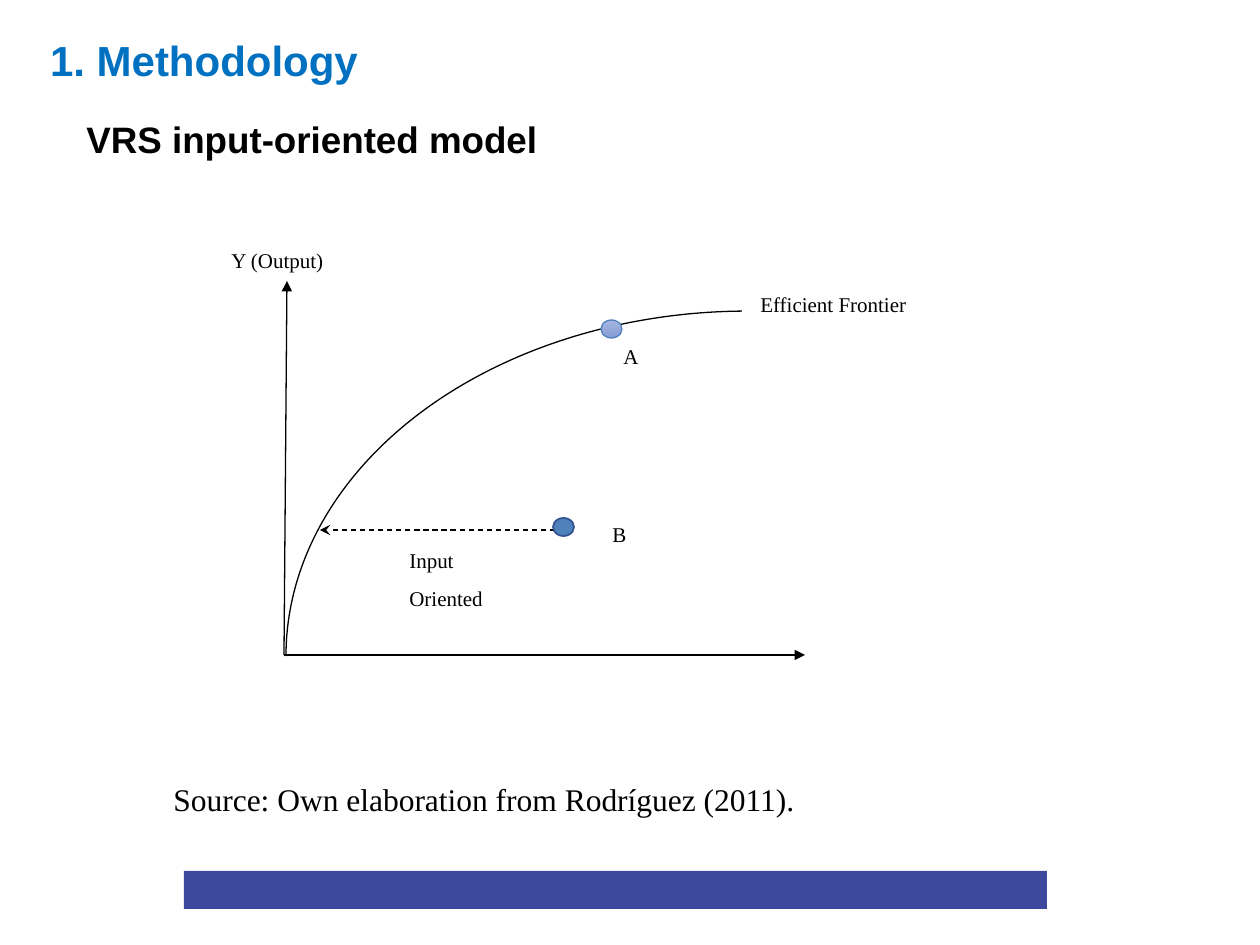
from dataclasses import dataclass

from pptx import Presentation
from pptx.dml.color import RGBColor
from pptx.enum.dml import MSO_LINE
from pptx.enum.shapes import MSO_CONNECTOR, MSO_SHAPE
from pptx.enum.text import MSO_ANCHOR, PP_ALIGN
from pptx.oxml.ns import qn
from pptx.util import Pt
from lxml import etree

PX = 914400 / 126
DASH = MSO_LINE.DASH
STRAIGHT = MSO_CONNECTOR.STRAIGHT
ARC, OVAL, RECTANGLE = MSO_SHAPE.ARC, MSO_SHAPE.OVAL, MSO_SHAPE.RECTANGLE
MIDDLE = MSO_ANCHOR.MIDDLE
CENTER, LEFT = PP_ALIGN.CENTER, PP_ALIGN.LEFT


@dataclass(frozen=True)
class Theme:
    """Colours, fonts and type sizes of the slide."""
    ink: str = "000000"
    title: str = "0070C0"
    bar: str = "3D499D"
    point: str = "4F81BD"
    point_edge: str = "31538F"
    gradient: tuple = ("A6B6DE", "859CD7")
    sans: str = "Arial"
    serif: str = "Times New Roman"
    title_size: int = 24
    subtitle_size: int = 21
    source_size: int = 18
    label_size: int = 12
    thin: float = 0.75


THEME = Theme()


def emu(*lengths):
    """Turn px lengths into EMU."""
    return [round(length * PX) for length in lengths]


def rgb(value):
    """Return the colour for a hex value."""
    return RGBColor.from_string(value)


def write(shape, text, size, font_name, color, bold=False, align=LEFT):
    """Put one formatted paragraph into a shape."""
    frame = shape.text_frame
    frame.word_wrap = True
    frame.text = text
    paragraph = frame.paragraphs[0]
    paragraph.alignment = align
    font = paragraph.runs[0].font
    font.size, font.name, font.bold = Pt(size), font_name, bold
    font.color.rgb = rgb(color)
    return paragraph


def add_text(slide, box, *style, **options):
    """Add a text box and return its paragraph."""
    return write(slide.shapes.add_textbox(*emu(*box)), *style, **options)


def add_label(slide, box, text):
    """Add a widely spaced diagram label."""
    paragraph = add_text(slide, box, text, THEME.label_size, THEME.serif, THEME.ink)
    paragraph.line_spacing = 1.5
    paragraph.space_after = Pt(12)


def add_outline(slide, kind, box, color, width):
    """Add a preset shape with a coloured line and no shadow."""
    shape = slide.shapes.add_shape(kind, *emu(*box))
    shape.shadow.inherit = False
    shape.line.color.rgb = rgb(color)
    shape.line.width = Pt(width)
    return shape


def add_arrow(slide, start, end, head, dash=None):
    """Add a thin straight arrow."""
    arrow = slide.shapes.add_connector(STRAIGHT, *emu(*start, *end))
    arrow.line.color.rgb = rgb(THEME.ink)
    arrow.line.width = Pt(THEME.thin)
    if dash is not None:
        arrow.line.dash_style = dash
    properties = arrow.element.spPr
    etree.SubElement(properties.find(qn("a:ln")), qn("a:tailEnd"), type=head)
    etree.SubElement(properties, qn("a:effectLst"))


def add_headings(slide, left, top):
    """Place the title and the subtitle."""
    title = slide.shapes.title
    title.left, title.top, title.width, title.height = emu(left, top, 408, 90)
    title.text_frame.vertical_anchor = MIDDLE
    write(title, "1. Methodology", THEME.title_size, THEME.sans, THEME.title,
          bold=True, align=CENTER)
    add_text(slide, (left + 74, top + 96, 623, 57), "VRS input-oriented model",
             THEME.subtitle_size, THEME.sans, THEME.ink, bold=True)


def add_frontier_diagram(slide, left, top):
    """Draw the axes, the efficient frontier, its points and labels."""
    def at(x, y, *size):
        return (left + x, top + y, *size)

    origin = at(65, 426)
    for end in (at(68, 52), at(586, 426)):
        add_arrow(slide, origin, end, "triangle")
    add_arrow(slide, at(345, 301), at(101, 301), "stealth", DASH)

    labels = (
        ("Y (Output)", at(0, 0, 170, 42)),
        ("Efficient Frontier", at(529, 44, 381, 59)),
        ("Input Oriented", at(178, 300, 129, 59)),
        ("B", at(381, 274, 49, 48)),
        ("A", at(392, 96, 49, 48)),
    )
    for text, box in labels:
        add_label(slide, box, text)

    point_b = add_outline(slide, OVAL, at(334, 289, 21, 18), THEME.point_edge, 1)
    point_b.fill.solid()
    point_b.fill.fore_color.rgb = rgb(THEME.point)

    frontier = add_outline(slide, ARC, at(184, -35, 690, 924), THEME.ink, THEME.thin)
    frontier.fill.background()
    frontier.rotation = 270
    frontier.adjustments[0], frontier.adjustments[1] = 162, 215.4

    point_a = add_outline(slide, OVAL, at(382, 91, 21, 18), THEME.point, THEME.thin)
    point_a.fill.gradient()
    point_a.fill.gradient_angle = 270
    for stop, color in zip(point_a.fill.gradient_stops, THEME.gradient):
        stop.color.rgb = rgb(color)


def add_footer(slide, left, top):
    """Place the source line and the bar below it."""
    add_text(slide, (left, top, 791, 50), "Source: Own elaboration from Rodríguez (2011).",
             THEME.source_size, THEME.serif, THEME.ink)
    bar = slide.shapes.add_shape(RECTANGLE, *emu(left + 23, top + 97, 863, 38))
    bar.shadow.inherit = False
    bar.fill.solid()
    bar.fill.fore_color.rgb = rgb(THEME.bar)
    bar.line.fill.background()


def main():
    """Build and save the slide."""
    presentation = Presentation()
    presentation.slide_width, presentation.slide_height = emu(1260, 945)
    slide = presentation.slides.add_slide(presentation.slide_layouts[5])
    add_headings(slide, 0, 15)
    add_frontier_diagram(slide, 219, 229)
    add_footer(slide, 161, 774)
    presentation.save("out.pptx")


if __name__ == "__main__":
    main()
